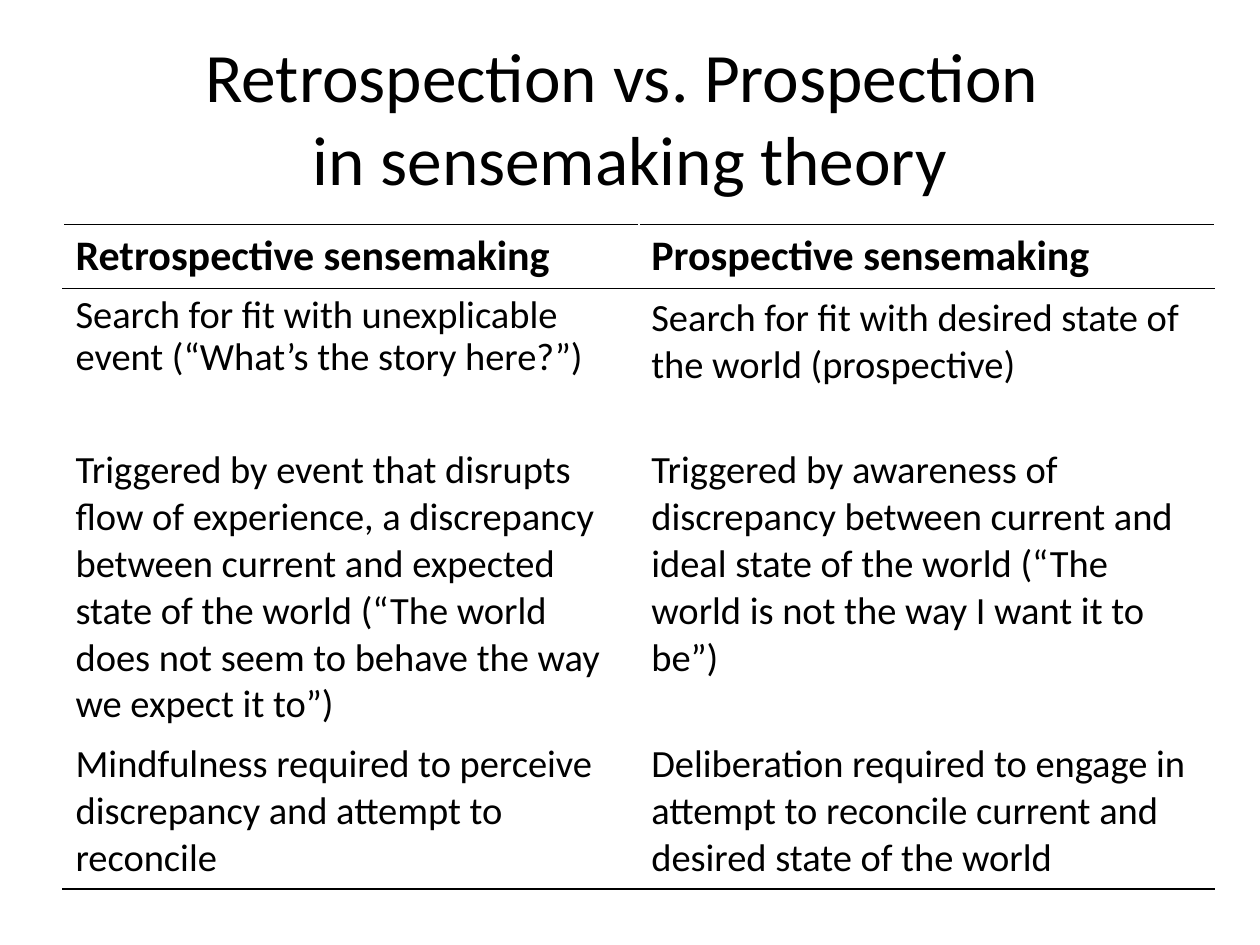
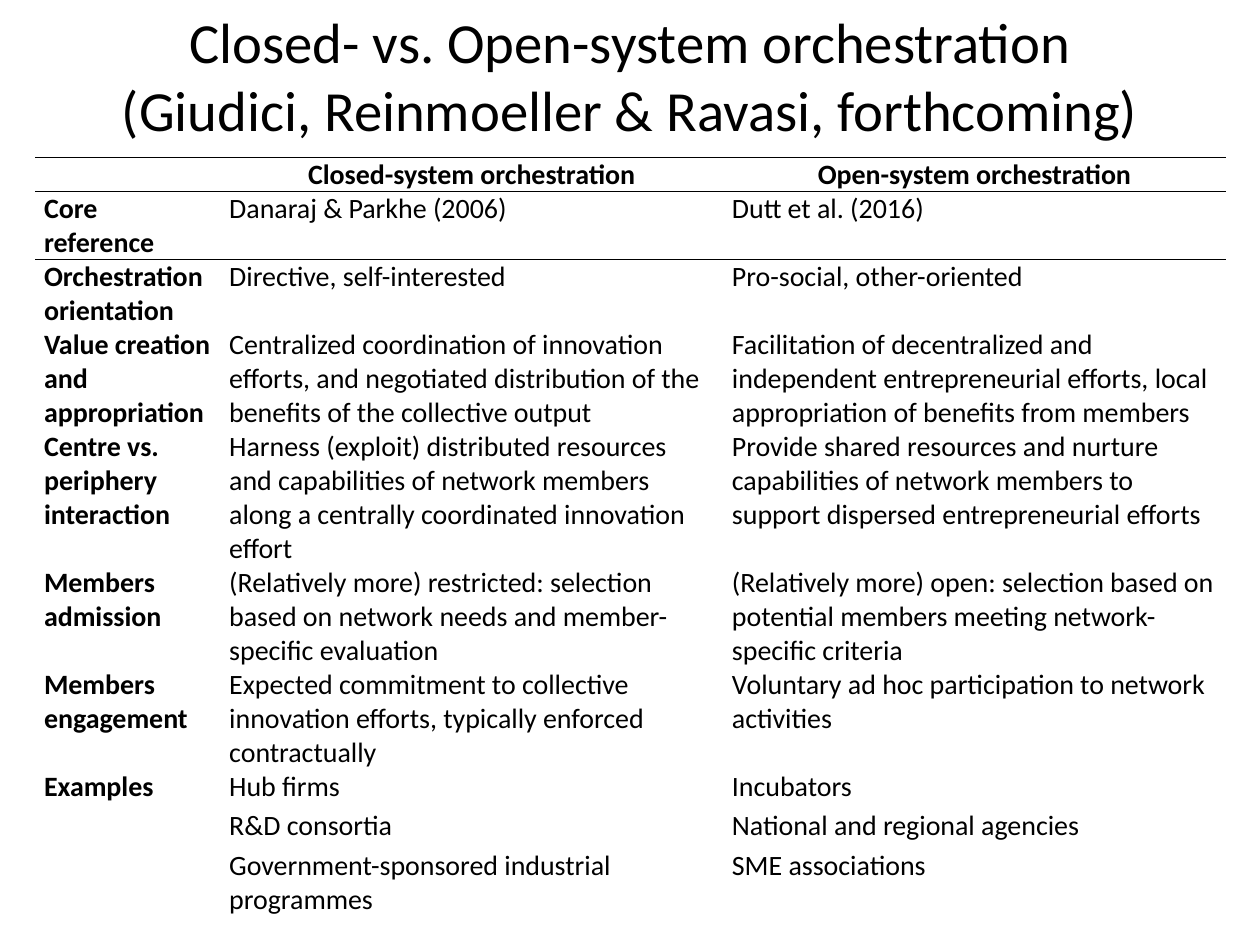
import lxml.etree
import pptx
import pptx.dml.color
import pptx.enum.text
import pptx.oxml.ns
import pptx.util

BLACK = pptx.dml.color.RGBColor(0, 0, 0)
WHITE = pptx.dml.color.RGBColor(255, 255, 255)
FONT = "Calibri"
COLS, ROWS = 40, 30
CENTER = pptx.enum.text.PP_ALIGN.CENTER
MIDDLE = pptx.enum.text.MSO_ANCHOR.MIDDLE

SENSE = [
    ("Retrospective sensemaking", "Prospective sensemaking"),
    ("Search for fit with unexplicable event (“What’s the story here?”)",
     "Search for fit with desired state of the world (prospective)"),
    ("Triggered by event that disrupts flow of experience, a discrepancy between "
     "current and expected state of the world (“The world does not seem to behave "
     "the way we expect it to”)",
     "Triggered by awareness of discrepancy between current and ideal state of the "
     "world (“The world is not the way I want it to be”)"),
    ("Mindfulness required to perceive discrepancy and attempt to reconcile",
     "Deliberation required to engage in attempt to reconcile current and desired "
     "state of the world"),
]

SYSTEMS = [
    ("", "Closed-system orchestration", "Open-system orchestration"),
    ("Core reference", "Danaraj & Parkhe (2006)", "Dutt et al. (2016)"),
    ("Orchestration orientation", "Directive, self-interested",
     "Pro-social, other-oriented"),
    ("Value creation and appropriation",
     "Centralized coordination of innovation efforts, and negotiated distribution "
     "of the benefits of the collective output",
     "Facilitation of decentralized and independent entrepreneurial efforts, local "
     "appropriation of benefits from members"),
    ("Centre vs. periphery interaction",
     "Harness (exploit) distributed resources and capabilities of network members "
     "along a centrally coordinated innovation effort",
     "Provide shared resources and nurture capabilities of network members to "
     "support dispersed entrepreneurial efforts"),
    ("Members admission",
     "(Relatively more) restricted: selection based on network needs and "
     "member-specific evaluation",
     "(Relatively more) open: selection based on potential members meeting "
     "network-specific criteria"),
    ("Members engagement",
     "Expected commitment to collective innovation efforts, typically enforced "
     "contractually",
     "Voluntary ad hoc participation to network activities"),
    ("Examples",
     "Hub firms\nR&D consortia\nGovernment-sponsored industrial programmes",
     "Incubators\nNational and regional agencies\nSME associations"),
]


class Deck:
    def __init__(self):
        self.show = pptx.Presentation()
        self.show.slide_width = pptx.util.Inches(10)
        self.show.slide_height = pptx.util.Inches(7.5)
        self.slide = None

    def page(self):
        self.slide = self.show.slides.add_slide(self.show.slide_layouts[6])
        fill = self.slide.background.fill
        fill.solid()
        fill.fore_color.rgb = WHITE

    def wide(self, cols):
        return round(self.show.slide_width * cols / COLS)

    def high(self, rows):
        return round(self.show.slide_height * rows / ROWS)

    def words(self, para, text, size, bold=False):
        run = para.add_run()
        run.text = text
        font = run.font
        font.name, font.size, font.bold = FONT, pptx.util.Pt(size), bold
        font.color.rgb = BLACK

    def title(self, top, lines, size):
        box = self.slide.shapes.add_textbox(
            self.wide(2), self.high(top), self.wide(36), self.high(5))
        frame = box.text_frame
        frame.word_wrap = True
        frame.vertical_anchor = MIDDLE
        para = frame.paragraphs[0]
        para.alignment = CENTER
        for i, line in enumerate(lines):
            if i:
                para.add_line_break()
            self.words(para, line, size)

    def table(self, left, top, widths, heights, rules, edge=None):
        """Add a table ruled in black at the given row edges, elsewhere in edge."""
        frame = self.slide.shapes.add_table(
            len(heights), len(widths), self.wide(left), self.high(top),
            self.wide(sum(widths)), self.high(sum(heights)))
        table = frame.table
        table.first_row = table.horz_banding = False
        for col, width in zip(table.columns, widths):
            col.width = self.wide(width)
        for row, height in zip(table.rows, heights):
            row.height = self.high(height)
        for r in range(len(heights)):
            for c in range(len(widths)):
                cell = table.cell(r, c)
                above = BLACK if r in rules else edge
                below = BLACK if r + 1 in rules else edge
                self.lines(cell, {"L": edge, "R": edge, "T": above, "B": below})
                if edge is None:
                    cell.fill.background()
                else:
                    cell.fill.solid()
                    cell.fill.fore_color.rgb = edge
        return table

    def lines(self, cell, sides):
        props = cell._tc.get_or_add_tcPr()
        name = pptx.oxml.ns.qn
        for side, color in sides.items():
            line = lxml.etree.SubElement(
                props, name("a:ln" + side), w=str(pptx.util.Pt(1)))
            if color is None:
                lxml.etree.SubElement(line, name("a:noFill"))
            else:
                fill = lxml.etree.SubElement(line, name("a:solidFill"))
                lxml.etree.SubElement(fill, name("a:srgbClr"), val=str(color))

    def label(self, cell, text, size, bold=False, align=None, after=None):
        """Fill a cell, one paragraph for each line of the text."""
        frame = cell.text_frame
        for i, part in enumerate(text.split("\n")):
            para = frame.add_paragraph() if i else frame.paragraphs[0]
            para.alignment = align
            if after:
                para.space_after = pptx.util.Pt(after)
            if part:
                self.words(para, part, size, bold)
            else:
                lxml.etree.SubElement(
                    para._p, pptx.oxml.ns.qn("a:endParaRPr"), sz=str(size * 100))


def sense(deck):
    deck.page()
    deck.title(1.2, ["Retrospection vs. Prospection ", "in sensemaking theory"], 39.6)
    table = deck.table(2, 7.12, [18.28] * 2, [2.04, 4.84, 9.34, 4.88],
                       rules=(0, 1, 4), edge=WHITE)
    for r, row in enumerate(SENSE):
        for c, text in enumerate(row):
            deck.label(table.cell(r, c), text, 22 if r else 24, bold=r == 0)
    table.cell(1, 0).text_frame.paragraphs[0].line_spacing = 0.9


def systems(deck):
    deck.page()
    deck.title(-0.12, ["Closed- vs. Open-system orchestration",
                       "(Giudici, Reinmoeller & Ravasi, forthcoming)"], 32.4)
    counts = [1, 2, 2, 3, 4, 3, 3, 5]
    table = deck.table(1.12, 5, [5.88, 15.96, 15.96],
                       [1.08 * n for n in counts], rules=(0, 1, 2))
    for r, row in enumerate(SYSTEMS):
        for c, text in enumerate(row):
            cell = table.cell(r, c)
            cell.margin_left = cell.margin_right = deck.wide(0.28)
            cell.margin_top = cell.margin_bottom = 0
            deck.label(cell, text, 16, bold=r == 0 or c == 0,
                       align=None if r else CENTER, after=3 if c else None)


def main():
    deck = Deck()
    sense(deck)
    systems(deck)
    deck.show.save("out.pptx")


if __name__ == "__main__":
    main()
